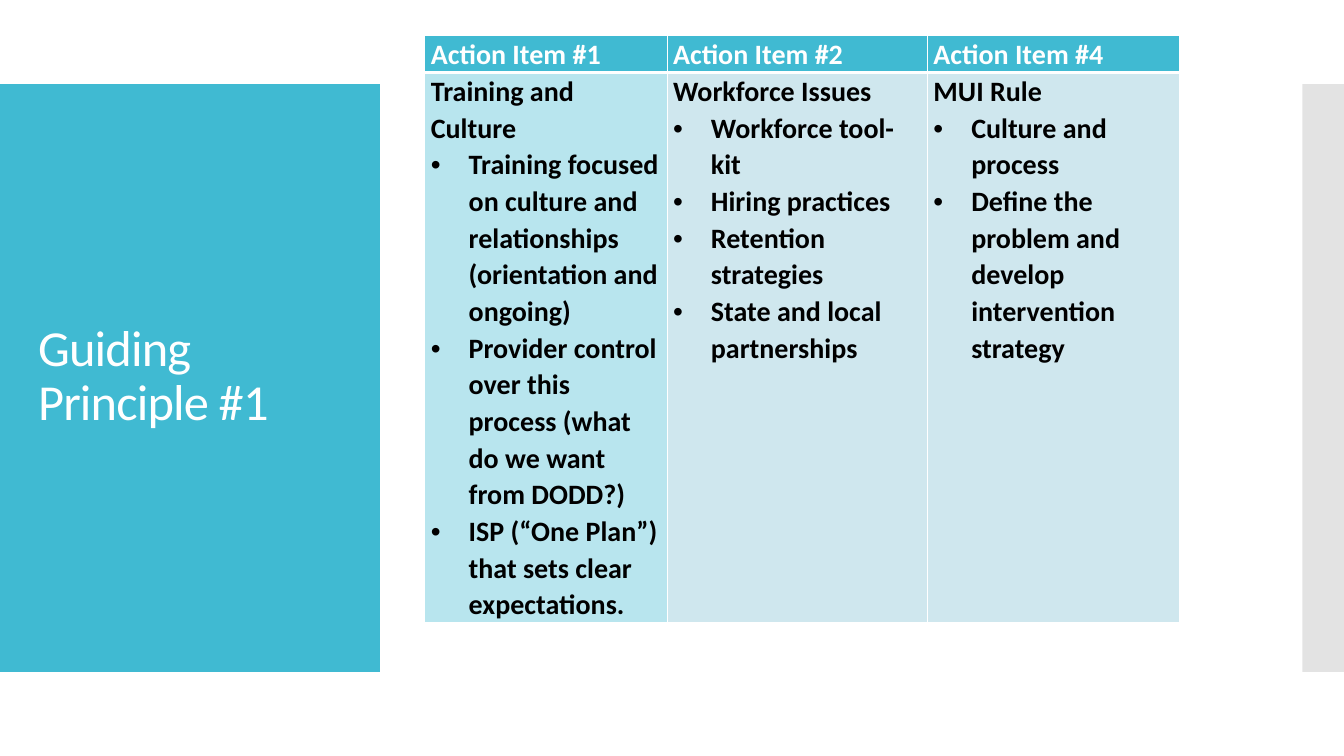
import pptx
import pptx.util
import pptx.oxml
import pptx.oxml.ns
import pptx.dml.color
import pptx.enum.shapes
import pptx.enum.text

Pt = pptx.util.Pt
HUES = {
    "teal": "40BAD2", "gray": "C8C8C8", "white": "FFFFFF", "black": "000000",
    "aqua": "B8E5EE", "pale": "CFE7EE",
}
ITEMS = [
    ("Action Item #1", "aqua", "Training and Culture", [
        "Training focused on culture and relationships (orientation and ongoing)",
        "Provider control over this process (what do we want from DODD?)",
        "ISP (“One Plan”) that sets clear expectations."]),
    ("Action Item #2", "pale", "Workforce Issues", [
        "Workforce tool-kit", "Hiring practices", "Retention strategies",
        "State and local partnerships"]),
    ("Action Item #4", "pale", "MUI Rule", [
        "Culture and process",
        "Define the problem and develop intervention strategy"]),
]


def make(tag, **attrs):
    node = pptx.oxml.parse_xml(f"<{tag} {pptx.oxml.ns.nsdecls('a')}/>")
    for key, value in attrs.items():
        node.set(key, str(value))
    return node


def paint(fill, hue):
    fill.solid()
    fill.fore_color.rgb = pptx.dml.color.RGBColor.from_string(HUES[hue])


def write(para, text, size=20, hue="black", bold=True, lead=1.07, bullet=False, track=0):
    """Fill one paragraph; track is letter spacing in hundredths of a point."""
    run = para.add_run()
    run.text = text
    run.font.name, run.font.size, run.font.bold = "Calibri", Pt(size), bold
    paint(run.font.fill, hue)
    if track:
        run.font._element.set("spc", str(track))
    para.alignment = pptx.enum.text.PP_ALIGN.LEFT
    para.line_spacing = lead
    if bullet:
        props = para._p.get_or_add_pPr()
        props.set("marL", str(Pt(27)))
        props.set("indent", str(-Pt(27)))
        props.append(make("a:buFont", typeface="Arial"))
        props.append(make("a:buChar", char="•"))


class Deck:
    def __init__(self):
        self.show = pptx.Presentation()
        self.show.slide_width, self.show.slide_height = Pt(960), Pt(540)
        self.slide = self.show.slides.add_slide(self.show.slide_layouts[5])

    def panel(self, left, width, hue, alpha=100):
        shape = self.slide.shapes.add_shape(
            pptx.enum.shapes.MSO_SHAPE.RECTANGLE, Pt(left), Pt(60), Pt(width), Pt(420))
        shape.shadow.inherit = False
        shape.line.fill.background()
        paint(shape.fill, hue)
        if alpha < 100:
            tint = shape._element.spPr.find(".//" + pptx.oxml.ns.qn("a:srgbClr"))
            tint.append(make("a:alpha", val=alpha * 1000))

    def title(self, text):
        """Place the title in front of the panels drawn so far."""
        shape = self.slide.shapes.title
        self.slide.shapes._spTree.append(shape._element)
        shape.left, shape.top, shape.width, shape.height = Pt(20), Pt(88.5), Pt(232), Pt(362)
        frame = shape.text_frame
        frame.word_wrap = True
        frame.auto_size = pptx.enum.text.MSO_AUTO_SIZE.NONE
        frame.vertical_anchor = pptx.enum.text.MSO_ANCHOR.MIDDLE
        write(frame.paragraphs[0], text, size=36, hue="white", bold=False, lead=0.9, track=-60)

    def cell(self, cell, hue, top=1, bottom=1):
        cell.margin_left = cell.margin_right = Pt(4.3)
        cell.margin_top = cell.margin_bottom = 0
        props = cell._tc.get_or_add_tcPr()
        for side, width in zip("LRTB", (1, 1, top, bottom)):
            line = make(f"a:ln{side}", w=Pt(width))
            solid = make("a:solidFill")
            solid.append(make("a:srgbClr", val=HUES["white"]))
            line.append(solid)
            props.append(line)
        paint(cell.fill, hue)
        return cell.text_frame

    def table(self, items, widths, heights):
        table = self.slide.shapes.add_table(
            len(heights), len(widths), Pt(303.5), Pt(25.5),
            Pt(sum(widths)), Pt(sum(heights))).table
        for row, height in zip(table.rows, heights):
            row.height = Pt(height)
        for col, (head, hue, topic, points) in enumerate(items):
            table.columns[col].width = Pt(widths[col])
            frame = self.cell(table.cell(0, col), "teal", bottom=3)
            write(frame.paragraphs[0], head, hue="white")
            frame = self.cell(table.cell(1, col), hue, top=3)
            write(frame.paragraphs[0], topic)
            for point in points:
                write(frame.add_paragraph(), point, bullet=True)


def main():
    deck = Deck()
    deck.panel(0, 271.3, "teal")
    deck.panel(930.3, 29.7, "gray", alpha=50)
    deck.title("Guiding Principle #1")
    deck.table(ITEMS, widths=(173, 186, 180), heights=(26, 392))
    deck.show.save("out.pptx")


if __name__ == "__main__":
    main()
